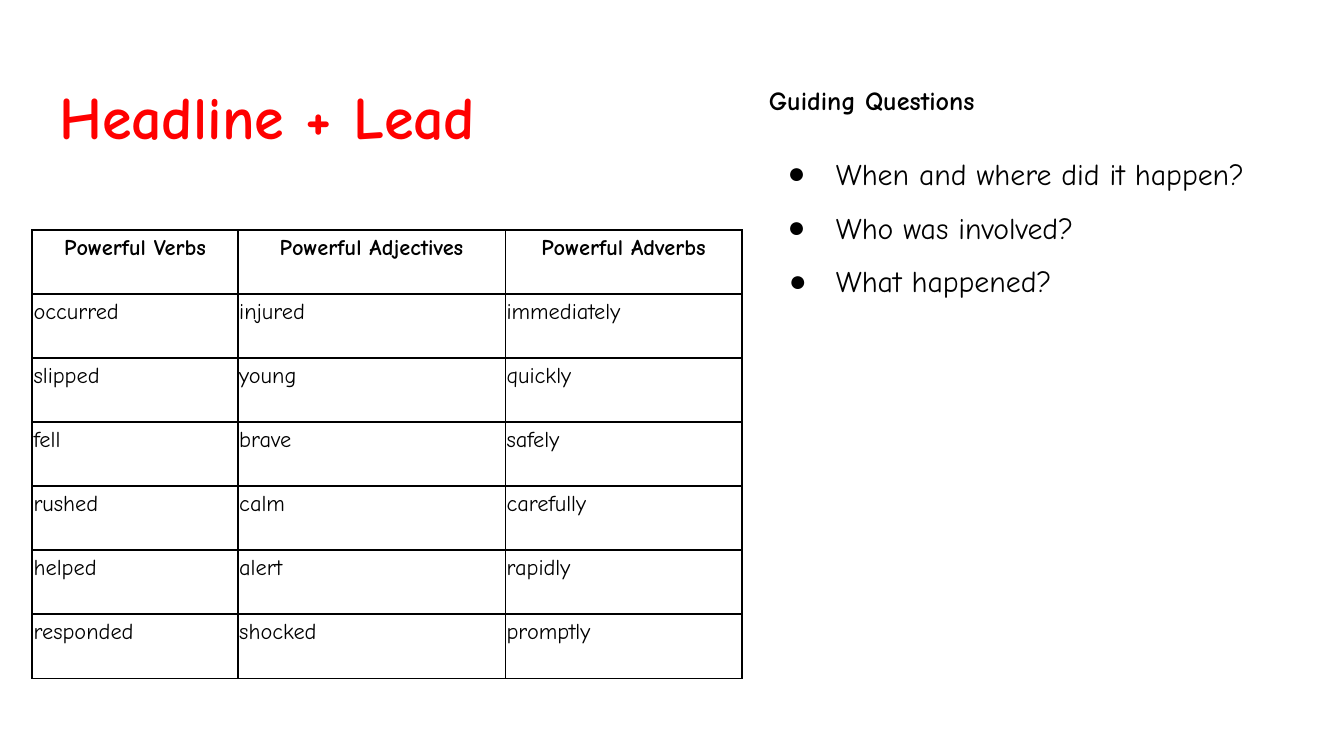
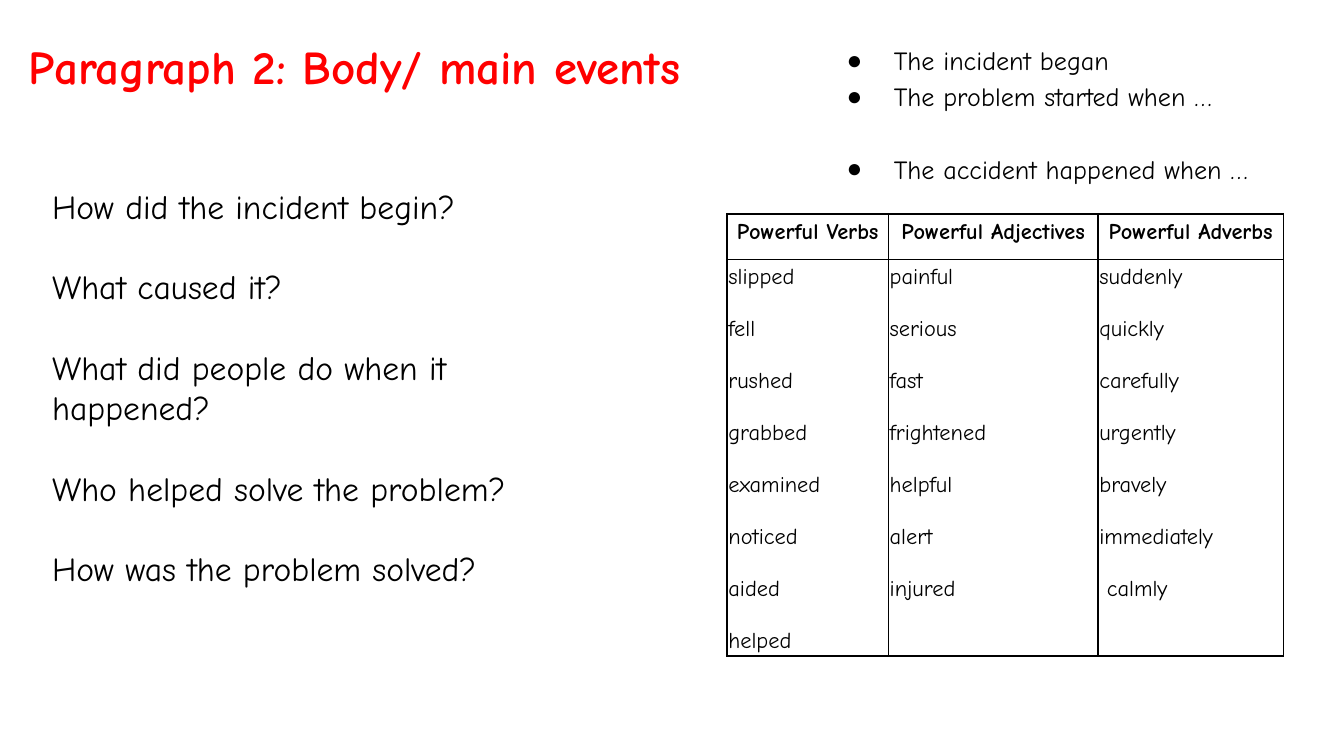
from lxml import etree
from pptx import Presentation
from pptx.dml.color import RGBColor
from pptx.enum import text
from pptx.oxml import ns
from pptx.util import Pt

PX = 9144  # 100 px to the inch
BLACK = RGBColor(0, 0, 0)
RED = RGBColor(255, 0, 0)
FONT = "Comic Neue"
BULLET_FONT = "Arial"
LEFT, CENTER = text.PP_ALIGN.LEFT, text.PP_ALIGN.CENTER
HEADINGS = ["Powerful Verbs", "Powerful Adjectives", "Powerful Adverbs"]
CELL = {"line_spacing": 1.15, "space_before": Pt(12)}


def add_node(parent, tag, **attributes):
    return etree.SubElement(parent, ns.qn(tag), attributes)


def write(frame, lines, size, color=BLACK, inset=10):
    """Fill a frame with (wording, paragraph formats, bold, hanging indent) lines."""
    frame.word_wrap = True
    frame.vertical_anchor = text.MSO_ANCHOR.TOP
    for side in ("left", "top", "right", "bottom"):
        setattr(frame, f"margin_{side}", inset * PX)
    for index, (wording, formats, bold, hang) in enumerate(lines):
        para = frame.add_paragraph() if index else frame.paragraphs[0]
        props = para._p.get_or_add_pPr()
        props.set("marL", str(50 * PX if hang else 0))
        props.set("indent", str(-hang * PX))
        if hang:
            add_node(add_node(props, "a:buClr"), "a:srgbClr", val=str(BLACK))
            add_node(props, "a:buFont", typeface=BULLET_FONT)
            add_node(props, "a:buChar", char="●")
        else:
            add_node(props, "a:buNone")
        base = {"alignment": LEFT, "space_before": Pt(0), "line_spacing": 1.0}
        for name, value in (base | formats).items():
            setattr(para, name, value)
        span = para.add_run()
        span.text = wording
        for name, value in {"name": FONT, "size": Pt(size), "bold": bold}.items():
            setattr(span.font, name, value)
        span.font.color.rgb = color


# What each slide holds
PAGES = [
    {
        "title": ("Headline + Lead", 32.2, (34, 49, 932, 63)),
        "body_box": (562, 49, 403, 185),
        "body_size": 16,
        "body": [
            ("Guiding Questions", CELL, True, 0),
            ("When and where did it happen?",
             {"line_spacing": 1.5, "space_before": Pt(12)}, False, 36),
            ("Who was involved?", {"line_spacing": 1.5}, False, 36),
            ("What happened?", {"line_spacing": 1.5}, False, 35),
        ],
        "table_at": (24, 171),
        "columns": [153, 199, 176],
        "rows": [334 / 7] * 7,
        "words": [
            [["occurred"], ["injured"], ["immediately"]],
            [["slipped"], ["young"], ["quickly"]],
            [["fell"], ["brave"], ["safely"]],
            [["rushed"], ["calm"], ["carefully"]],
            [["helped"], ["alert"], ["rapidly"]],
            [["responded"], ["shocked"], ["promptly"]],
        ],
    },
    {
        "title": ("Paragraph 2: Body/ main events", 25.2, (11, 18, 611, 63)),
        "body_box": (605, 0, 360, 182),
        "body_size": 14,
        "body": [
            ("The incident began",
             {"line_spacing": 2.0, "space_before": Pt(12)}, False, 35),
            ("The problem started when …", {"line_spacing": 1.15}, False, 35),
            ("The accident happened when …",
             {"line_spacing": 1.15, "space_before": Pt(19.4)}, False, 35),
        ],
        "table_at": (541, 159),
        "columns": [120, 156, 138],
        "rows": [34, 260],
        "words": [[
            ["slipped", "fell", "rushed", "grabbed", "examined", "noticed",
             "aided", "helped"],
            ["painful", "serious", "fast", "frightened", "helpful", "alert",
             "injured"],
            ["suddenly", "quickly", "carefully", "urgently", "bravely",
             "immediately", " calmly"],
        ]],
    },
]
QUESTIONS = [
    "How did the incident begin?",
    "What caused it?",
    "What did people do when it happened?",
    "Who helped solve the problem?",
    "How was the problem solved?",
]

# Widescreen deck, 16 to 9
deck = Presentation()
deck.slide_width = 1000 * PX
deck.slide_height = deck.slide_width * 9 // 16

for content in PAGES:
    page = deck.slides.add_slide(deck.slide_layouts[1])

    # Title and list
    wording, size, title_box = content["title"]
    title, body = page.shapes.title, page.placeholders[1]
    for box, place in ((title, title_box), (body, content["body_box"])):
        for name, value in zip(("left", "top", "width", "height"), place):
            setattr(box, name, value * PX)
        box.text_frame.auto_size = text.MSO_AUTO_SIZE.NONE
    write(title.text_frame, [(wording, {}, True, 0)], size, RED)
    write(body.text_frame, content["body"], content["body_size"])
    for para in body.text_frame.paragraphs:
        for span in para.runs:
            if span.font.bold:
                span.font.size = Pt(14)

    # Word table
    columns, rows = content["columns"], content["rows"]
    left, top = content["table_at"]
    table = page.shapes.add_table(
        len(rows), len(columns), left * PX, top * PX,
        sum(columns) * PX, round(sum(rows) * PX)).table
    table.first_row = table.horz_banding = False
    for column, width in zip(table.columns, columns):
        column.width = width * PX
    for row, height in zip(table.rows, rows):
        row.height = round(height * PX)
    grid = [[[heading] for heading in HEADINGS]] + content["words"]
    for r, line in enumerate(grid):
        formats = CELL | {"alignment": LEFT if r else CENTER}
        for c, words in enumerate(line):
            cell = table.cell(r, c)
            write(cell.text_frame, [(word, formats, r == 0, 0) for word in words],
                  12, inset=1)
            for side in ("left", "top", "right", "bottom"):
                setattr(cell, f"margin_{side}", PX)
            props = cell._tc.get_or_add_tcPr()
            for edge in ("a:lnL", "a:lnR", "a:lnT", "a:lnB"):
                border = add_node(props, edge, w=str(Pt(1)))
                add_node(add_node(border, "a:solidFill"), "a:srgbClr", val=str(BLACK))
            cell.fill.background()

# Questions on the last slide
box = page.shapes.add_textbox(29 * PX, 128 * PX, 384 * PX, 399 * PX)
write(box.text_frame,
      [(question, {"space_before": Pt(21.6 if i else 0)}, False, 0)
       for i, question in enumerate(QUESTIONS)], 18)

deck.save("out.pptx")
